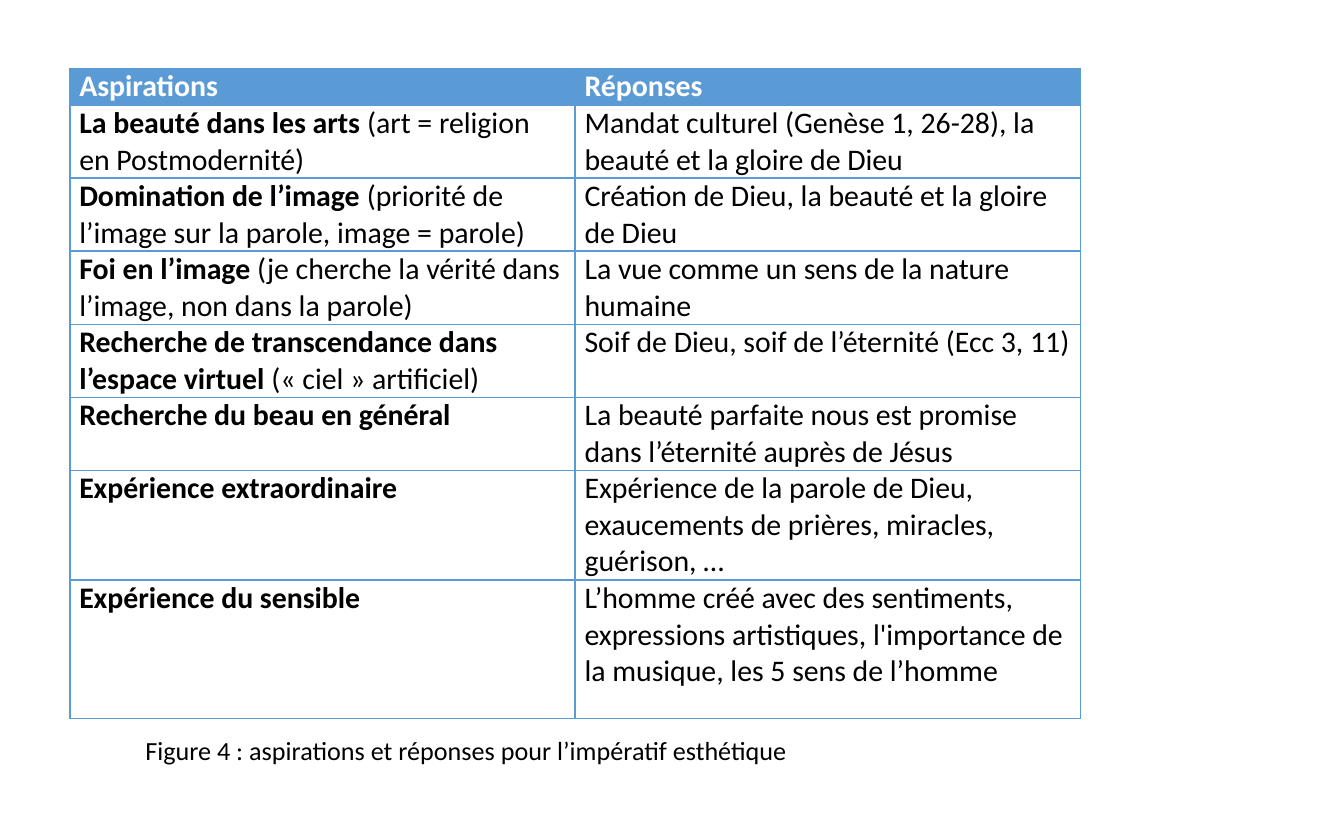
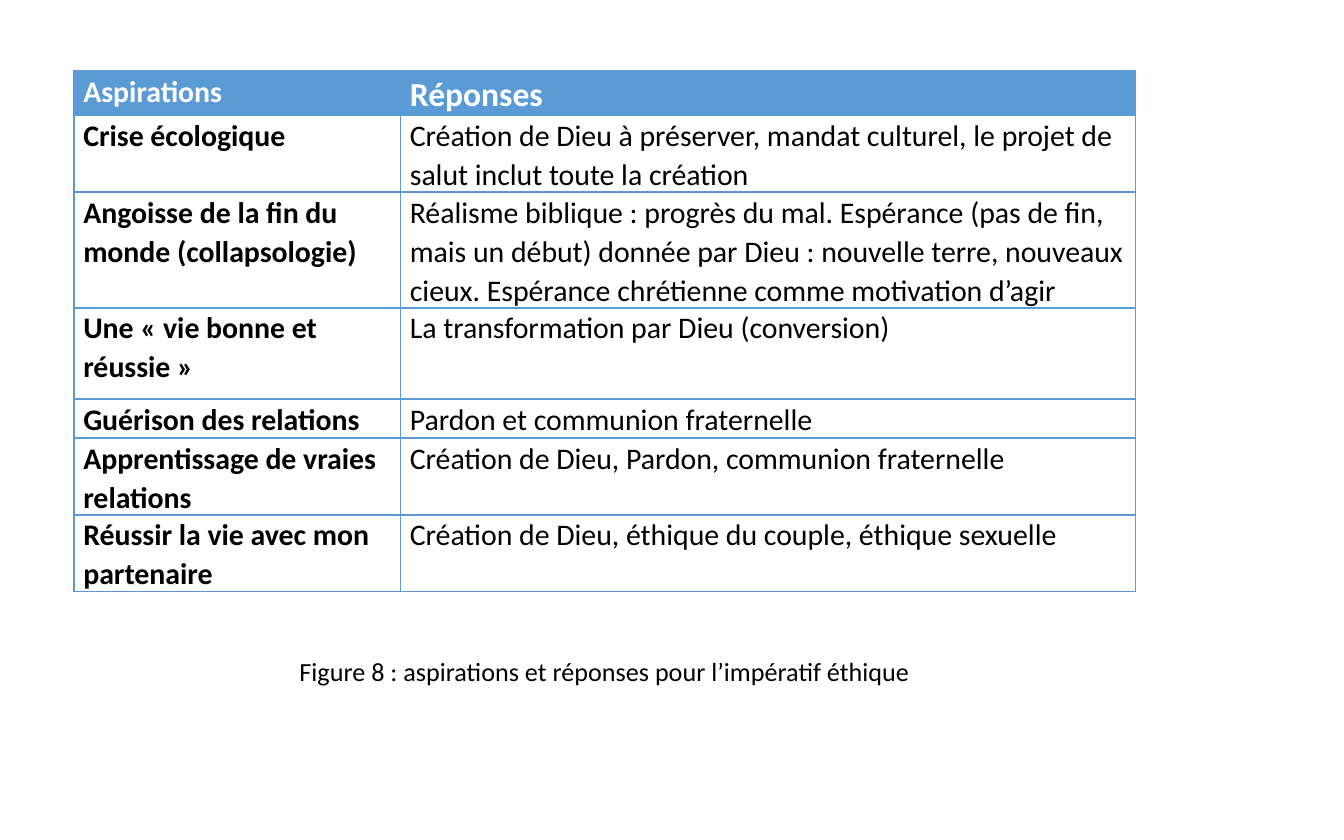
from lxml import etree
from pptx import Presentation
from pptx.dml.color import RGBColor
from pptx.enum.text import MSO_AUTO_SIZE, PP_ALIGN
from pptx.oxml.ns import qn
from pptx.util import Inches, Pt

HUES = {"blue": "5B9BD5", "white": "FFFFFF", "black": "000000"}
FONT = "Calibri"

# Rows hold: bold aspiration, plain remark, response, row height
PAGES = [
    dict(
        at=(0.52, 0.51), cols=(3.76, 3.76), lead=1.0, head=(16, 16), top=0.26,
        rows=[
            ("La beauté dans les arts ", "(art = religion en Postmodernité)",
             "Mandat culturel (Genèse 1, 26-28), la beauté et la gloire de Dieu", 0.54),
            ("Domination de l’image ", "(priorité de l’image sur la parole, image = parole)",
             "Création de Dieu, la beauté et la gloire de Dieu", 0.53),
            ("Foi en l’image ", "(je cherche la vérité dans l’image, non dans la parole)",
             "La vue comme un sens de la nature humaine", 0.53),
            ("Recherche de transcendance dans l’espace virtuel ", "(« ciel » artificiel)",
             "Soif de Dieu, soif de l’éternité (Ecc 3, 11)", 0.53),
            ("Recherche du beau en général", "",
             "La beauté parfaite nous est promise dans l’éternité auprès de Jésus", 0.53),
            ("Expérience extraordinaire", "",
             "Expérience de la parole de Dieu, exaucements de prières, miracles, "
             "guérison, …", 0.8),
            ("Expérience du sensible", "",
             "L’homme créé avec des sentiments, expressions artistiques, "
             "l'importance de la musique, les 5 sens de l’homme", 1.03),
        ],
        note="Figure 4 : aspirations et réponses pour l’impératif esthétique",
        box=(0.42, 5.4, 6.1, 0.34),
    ),
    dict(
        at=(0.55, 0.53), cols=(2.43, 5.47), lead=1.07, head=(16, 18), top=0.33,
        rows=[
            ("Crise écologique", "",
             "Création de Dieu à préserver, mandat culturel, le projet de salut "
             "inclut toute la création", 0.57),
            ("Angoisse de la fin du monde (collapsologie)", "",
             "Réalisme biblique : progrès du mal. Espérance (pas de fin, mais un "
             "début) donnée par Dieu : nouvelle terre, nouveaux cieux. Espérance "
             "chrétienne comme motivation d’agir", 0.86),
            ("Une « vie bonne et réussie »", "",
             "La transformation par Dieu (conversion)", 0.68),
            ("Guérison des relations", "", "Pardon et communion fraternelle", 0.29),
            ("Apprentissage de vraies relations", "",
             "Création de Dieu, Pardon, communion fraternelle", 0.57),
            ("Réussir la vie avec mon partenaire", "",
             "Création de Dieu, éthique du couple, éthique sexuelle", 0.57),
        ],
        note="Figure 8 : aspirations et réponses pour l’impératif éthique",
        box=(2, 4.81, 5, 0.34),
    ),
]


def write(frame, text, size=16, hue="black", bold=False, lead=1.0, align=PP_ALIGN.LEFT):
    """Add a run to the first paragraph of a frame."""
    para = frame.paragraphs[0]
    para.alignment = align
    para.line_spacing = lead
    para.space_after = Pt(8)
    run = para.add_run()
    run.text = text
    run.font.name = FONT
    run.font.size = Pt(size)
    run.font.bold = bold
    run.font.color.rgb = RGBColor.from_string(HUES[hue])


def style(cell, fill):
    """Set the margins, borders and fill of a cell."""
    cell.margin_left = cell.margin_right = Inches(0.07)
    cell.margin_top = cell.margin_bottom = 0
    props = cell._tc.get_or_add_tcPr()
    for side in ("a:lnL", "a:lnR", "a:lnT", "a:lnB"):
        line = etree.SubElement(props, qn(side), w=str(Pt(1)))
        solid = etree.SubElement(line, qn("a:solidFill"))
        etree.SubElement(solid, qn("a:srgbClr"), val=HUES["blue"])
    if fill:
        cell.fill.solid()
        cell.fill.fore_color.rgb = RGBColor.from_string(HUES[fill])
    else:
        cell.fill.background()


deck = Presentation()
deck.slide_width, deck.slide_height = Inches(10), Inches(6.25)

for page in PAGES:
    slide = deck.slides.add_slide(deck.slide_layouts[6])
    rows, lead = page["rows"], page["lead"]

    # Table frame
    highs = [page["top"]] + [row[3] for row in rows]
    spans = (*page["at"], sum(page["cols"]), sum(highs))
    table = slide.shapes.add_table(len(highs), 2, *map(Inches, spans)).table
    table.horz_banding = False
    for col, wide in zip(table.columns, page["cols"]):
        col.width = Inches(wide)
    for row, high in zip(table.rows, highs):
        row.height = Inches(high)

    # Header row
    for col, text in enumerate(("Aspirations", "Réponses")):
        cell = table.cell(0, col)
        style(cell, "blue")
        write(cell.text_frame, text, size=page["head"][col], hue="white",
              bold=True, lead=lead)

    # Body rows
    for num, (wish, remark, reply, high) in enumerate(rows, 1):
        left, right = table.cell(num, 0), table.cell(num, 1)
        style(left, "white")
        style(right, None)
        write(left.text_frame, wish, bold=True, lead=lead)
        if remark:
            write(left.text_frame, remark, lead=lead)
        write(right.text_frame, reply, lead=lead)

    # Caption
    frame = slide.shapes.add_textbox(*map(Inches, page["box"])).text_frame
    frame.word_wrap = True
    frame.auto_size = MSO_AUTO_SIZE.SHAPE_TO_FIT_TEXT
    write(frame, page["note"], size=14, lead=1.07, align=PP_ALIGN.CENTER)

deck.save("out.pptx")
